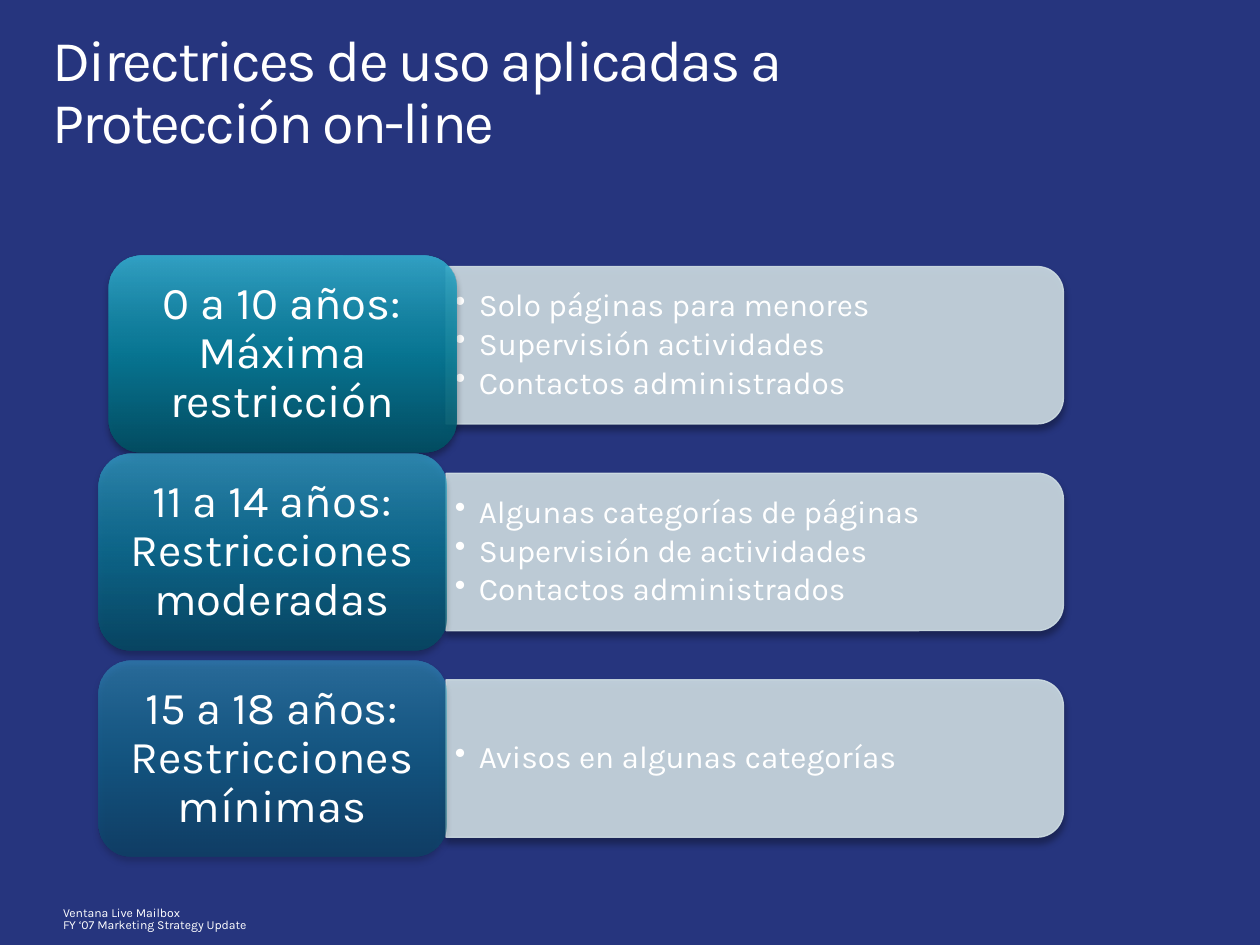
from copy import deepcopy
from dataclasses import dataclass

from lxml import etree
from pptx import Presentation
from pptx import util as u
from pptx.dml.color import RGBColor
from pptx.enum import shapes, text
from pptx.oxml import parse_xml
from pptx.oxml.ns import nsdecls, qn

FONT = "Karla"
COLORS = {"background": "26357E", "text": "FFFFFF", "panel": "CEDDE3", "shadow": "000000"}
GRADIENT = {0: "015062", 50: "077E99", 70: "178EAB", 100: "35ADCE"}

# Row grid, in inches
FIRST_CENTER, ROW_PITCH = 2.74, 1.64
LABEL_LEFT, LABEL_W, LABEL_H = 0.78, 2.76, 1.56
PANEL_LEFT, PANEL_W, PANEL_H = LABEL_LEFT + LABEL_W, 4.9, 1.25
LABEL_PAD, PANEL_PAD = 0.08, 0.06


@dataclass
class AgeGroup:
    label: str
    rules: list[str]
    opacity: int
    dx: float = 0
    dy: float = 0


GROUPS = [
    AgeGroup("0 a 10 años: Máxima restricción",
             ["Solo páginas para menores", "Supervisión actividades", "Contactos administrados"],
             90, 0.08, 0.07),
    AgeGroup("11 a 14 años: Restricciones moderadas",
             ["Algunas categorías de páginas", "Supervisión de actividades",
              "Contactos administrados"], 70),
    AgeGroup("15 a 18 años: Restricciones mínimas", ["Avisos en algunas categorías"], 50),
]


def rgb(name: str) -> RGBColor:
    return RGBColor.from_string(COLORS[name])


def add_text(s, box, lines, *, size, insets=(0, 0), spacing=0.9, after=0, bullet=False,
             align=text.PP_ALIGN.LEFT, anchor=text.MSO_ANCHOR.TOP, wrap=True, tracking=0):
    """Add a text box; each item of lines is a paragraph, and \\v breaks a line."""
    tf = s.shapes.add_textbox(*map(u.Inches, box)).text_frame
    tf.word_wrap, tf.vertical_anchor = wrap, anchor
    tf.margin_left = tf.margin_right = u.Inches(insets[0])
    tf.margin_top = tf.margin_bottom = u.Inches(insets[1])
    for i, line in enumerate(lines):
        p = tf.add_paragraph() if i else tf.paragraphs[0]
        p.text = line
        p.alignment, p.line_spacing, p.space_after = align, spacing, u.Pt(after)
        if bullet:
            pPr = p._p.get_or_add_pPr()
            pPr.set("marL", str(u.Inches(0.19)))
            pPr.set("indent", str(-u.Inches(0.19)))
            etree.SubElement(pPr, qn("a:buChar"), char="•")
        for r in p.runs:
            r.font.size, r.font.name = u.Pt(size), FONT
            r.font.color.rgb = rgb("text")
            if tracking:
                r._r.get_or_add_rPr().set("spc", str(round(tracking * 100)))
        # Line breaks share the format of the text around them
        for br in p._p.findall(qn("a:br")):
            br.append(deepcopy(p.runs[0]._r.rPr))


def add_shadow(sp) -> None:
    sp._element.spPr.append(parse_xml(
        f'<a:effectLst {nsdecls("a")}><a:outerShdw blurRad="{u.Pt(4)}" dist="{u.Pt(3)}" '
        f'dir="5400000" rotWithShape="0"><a:srgbClr val="{COLORS["shadow"]}">'
        '<a:alpha val="35000"/></a:srgbClr></a:outerShdw></a:effectLst>'))


def add_panel(s, center: float) -> None:
    """A panel rounded on its right side: a top-rounded shape turned by 90 degrees."""
    left = PANEL_LEFT + (PANEL_W - PANEL_H) / 2
    sp = s.shapes.add_shape(shapes.MSO_SHAPE.ROUND_2_SAME_RECTANGLE, u.Inches(left),
                            u.Inches(center - PANEL_W / 2), u.Inches(PANEL_H), u.Inches(PANEL_W))
    sp.rotation = 90
    sp.fill.solid()
    sp.fill.fore_color.rgb = sp.line.color.rgb = rgb("panel")
    sp.line.width = u.Pt(0.75)
    for color in sp._element.spPr.iter(qn("a:srgbClr")):
        etree.SubElement(color, qn("a:alpha"), val="90000")
    add_shadow(sp)


def add_label(s, left: float, top: float, opacity: int) -> None:
    sp = s.shapes.add_shape(shapes.MSO_SHAPE.ROUNDED_RECTANGLE,
                            *map(u.Inches, (left, top, LABEL_W, LABEL_H)))
    sp.line.fill.background()
    stops = "".join(f'<a:gs pos="{pos * 1000}"><a:srgbClr val="{color}">'
                    f'<a:alpha val="{opacity * 1000}"/></a:srgbClr></a:gs>'
                    for pos, color in GRADIENT.items())
    sp._element.spPr.find(qn("a:prstGeom")).addnext(parse_xml(
        f'<a:gradFill rotWithShape="1" {nsdecls("a")}><a:gsLst>{stops}</a:gsLst>'
        '<a:lin ang="16200000" scaled="0"/></a:gradFill>'))
    add_shadow(sp)


def add_row(s, group: AgeGroup, center: float) -> None:
    middle = text.MSO_ANCHOR.MIDDLE
    add_panel(s, center)
    add_text(s, (PANEL_LEFT, center - PANEL_H / 2 + PANEL_PAD, PANEL_W - PANEL_PAD,
                 PANEL_H - 2 * PANEL_PAD), group.rules,
             size=18, insets=(0.07, 0.04), after=2.7, bullet=True, anchor=middle)
    left, top = LABEL_LEFT + group.dx, center - LABEL_H / 2 + group.dy
    add_label(s, left, top, group.opacity)
    add_text(s, (left + LABEL_PAD, top + LABEL_PAD, LABEL_W - 2 * LABEL_PAD,
                 LABEL_H - 2 * LABEL_PAD), [group.label],
             size=26, insets=(0.11, 0.05), align=text.PP_ALIGN.CENTER, anchor=middle)


def main() -> None:
    prs = Presentation()
    prs.slide_width, prs.slide_height = u.Inches(10), u.Inches(7.5)
    s = prs.slides.add_slide(prs.slide_layouts[6])
    s.background.fill.solid()
    s.background.fill.fore_color.rgb = rgb("background")

    # Footer and title
    add_text(s, (0.42, 7.17, 1.65, 0.27),
             ["Ventana Live Mailbox\vFY ‘07 Marketing Strategy Update"],
             size=7, insets=(0.08, 0.04), spacing=0.8, wrap=False)
    add_text(s, (0.42, 0.25, 9.16, 1), ["Directrices de uso aplicadas a \vProtección on-line"],
             size=33, tracking=-1.2)

    # One row for each age group
    for i, group in enumerate(GROUPS):
        add_row(s, group, FIRST_CENTER + i * ROW_PITCH)
    prs.save("out.pptx")


if __name__ == "__main__":
    main()
